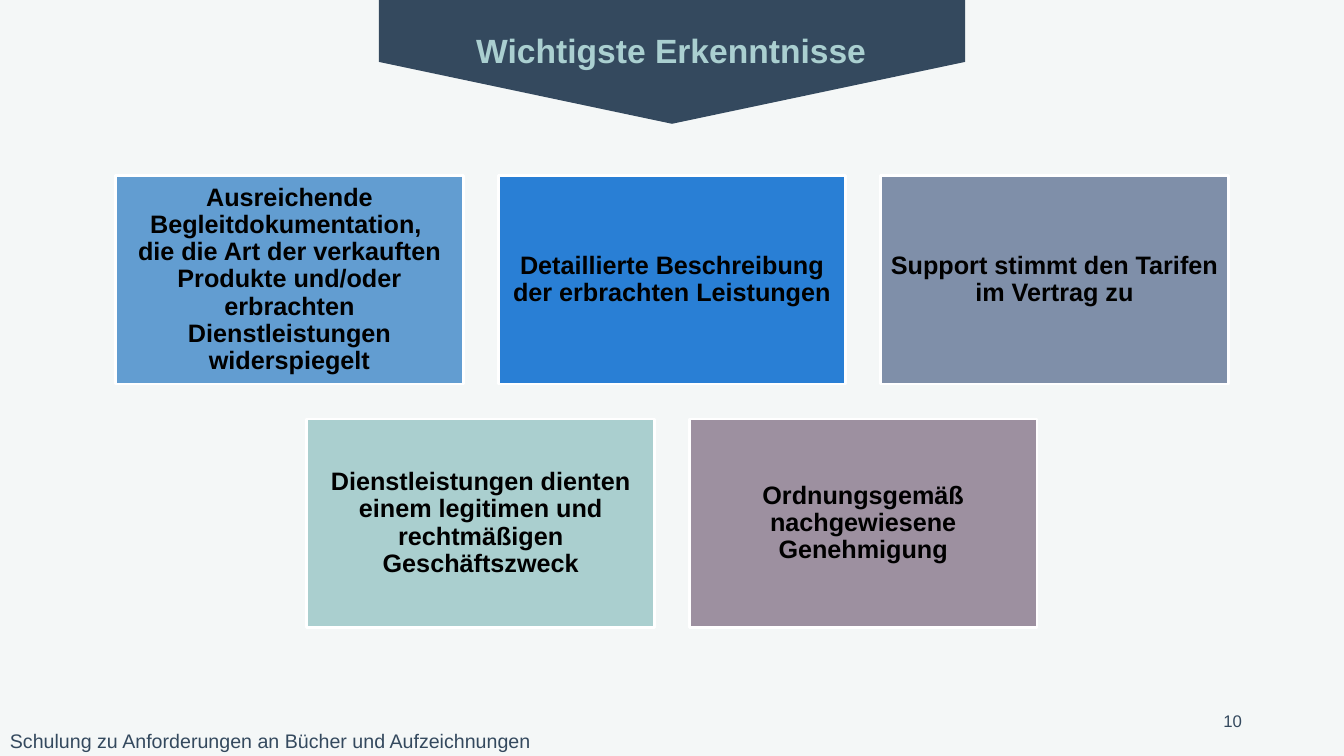
"""Build the slide with the key findings as five cards under a pointed banner."""
import dataclasses

import pptx
import pptx.dml.color
import pptx.enum.shapes
import pptx.enum.text
import pptx.util

Cm = pptx.util.Cm
Align = pptx.enum.text.PP_ALIGN
Anchor = pptx.enum.text.MSO_ANCHOR
Shape = pptx.enum.shapes.MSO_SHAPE


@dataclasses.dataclass(frozen=True)
class Theme:
    """Colours, font and type sizes of the slide."""
    font: str = "Arial"
    background: str = "F4F7F7"
    navy: str = "34495E"
    mint: str = "AACFD0"
    white: str = "FFFFFF"
    black: str = "000000"
    title_size: int = 24
    card_size: int = 18
    footer_size: int = 14
    number_size: int = 12


THEME = Theme()
SLIDE_WIDTH, SLIDE_HEIGHT = 33.87, 19.05
BANNER_WIDTH, BANNER_HEIGHT = 14.78, 3.12
CARD_WIDTH, CARD_HEIGHT, CARD_GAP, CARDS_TOP = 8.76, 5.26, 0.88, 4.42
CARD_MARGIN = 0.17

CARD_ROWS = [
    [
        ("Ausreichende Begleitdokumentation, \ndie die Art der verkauften Produkte "
         "und/oder erbrachten Dienstleistungen widerspiegelt", "629DD1"),
        ("Detaillierte Beschreibung der erbrachten Leistungen", "297FD5"),
        ("Support stimmt den Tarifen im Vertrag zu", "7F8FA9"),
    ],
    [
        ("Dienstleistungen dienten einem legitimen und rechtmäßigen Geschäftszweck",
         "AACFCF"),
        ("Ordnungsgemäß nachgewiesene Genehmigung", "9D90A0"),
    ],
]


def rgb(value):
    """Turn a hex string into a colour."""
    return pptx.dml.color.RGBColor.from_string(value)


def write_text(box, text, size, colour, align, anchor, bold=False):
    """Fill a shape with one styled paragraph and return it."""
    frame = box.text_frame
    frame.word_wrap = True
    frame.vertical_anchor = anchor
    para = frame.paragraphs[0]
    para.text = text
    para.alignment = align
    para.font.name = THEME.font
    para.font.size = pptx.util.Pt(size)
    para.font.bold = bold
    para.font.color.rgb = rgb(colour)
    return para


def add_label(page, bounds, *text_style, **options):
    """Add a text box at the given bounds in centimetres."""
    box = page.shapes.add_textbox(*map(Cm, bounds))
    write_text(box, *text_style, **options)


def add_filled_shape(page, kind, bounds, fill):
    """Add a flat, unlined preset shape at the given bounds in centimetres."""
    shape = page.shapes.add_shape(kind, *map(Cm, bounds))
    shape.shadow.inherit = False
    shape.fill.solid()
    shape.fill.fore_color.rgb = rgb(fill)
    shape.line.fill.background()
    return shape


def add_banner(page):
    """Add the banner that points down from the top edge."""
    left = (SLIDE_WIDTH - BANNER_HEIGHT) / 2
    top = (BANNER_HEIGHT - BANNER_WIDTH) / 2
    banner = add_filled_shape(page, Shape.PENTAGON,
                              (left, top, BANNER_HEIGHT, BANNER_WIDTH), THEME.navy)
    banner.rotation = 90


def add_card(page, left, top, text, fill):
    """Add one finding as a white-edged card."""
    card = add_filled_shape(page, Shape.RECTANGLE,
                            (left, top, CARD_WIDTH, CARD_HEIGHT), fill)
    card.line.color.rgb = rgb(THEME.white)
    card.line.width = pptx.util.Pt(2)
    frame = card.text_frame
    frame.margin_left = frame.margin_right = Cm(CARD_MARGIN)
    frame.margin_top = frame.margin_bottom = Cm(CARD_MARGIN)
    para = write_text(card, text, THEME.card_size, THEME.black,
                      Align.CENTER, Anchor.MIDDLE, bold=True)
    para.line_spacing = 0.9


def add_cards(page):
    """Lay out the card rows, each centred on the slide."""
    for row, cards in enumerate(CARD_ROWS):
        row_width = len(cards) * (CARD_WIDTH + CARD_GAP) - CARD_GAP
        row_left = (SLIDE_WIDTH - row_width) / 2
        top = CARDS_TOP + row * (CARD_HEIGHT + CARD_GAP)
        for column, (text, fill) in enumerate(cards):
            add_card(page, row_left + column * (CARD_WIDTH + CARD_GAP), top, text, fill)


def main():
    """Build and save the deck."""
    deck = pptx.Presentation()
    deck.slide_width, deck.slide_height = Cm(SLIDE_WIDTH), Cm(SLIDE_HEIGHT)
    page = deck.slides.add_slide(deck.slide_layouts[6])
    page.background.fill.solid()
    page.background.fill.fore_color.rgb = rgb(THEME.background)

    add_label(page, (0, 18.24, 15.39, 1.63),
              "Schulung zu Anforderungen an Bücher und Aufzeichnungen",
              THEME.footer_size, THEME.navy, Align.LEFT, Anchor.TOP)
    add_banner(page)
    add_label(page, (7.54, 0.64, 18.75, 1.27), "Wichtigste Erkenntnisse",
              THEME.title_size, THEME.mint, Align.CENTER, Anchor.TOP, bold=True)
    add_label(page, (23.93, 17.65, 7.62, 1.02), "10",
              THEME.number_size, THEME.navy, Align.RIGHT, Anchor.MIDDLE)
    add_cards(page)
    deck.save("out.pptx")


if __name__ == "__main__":
    main()
